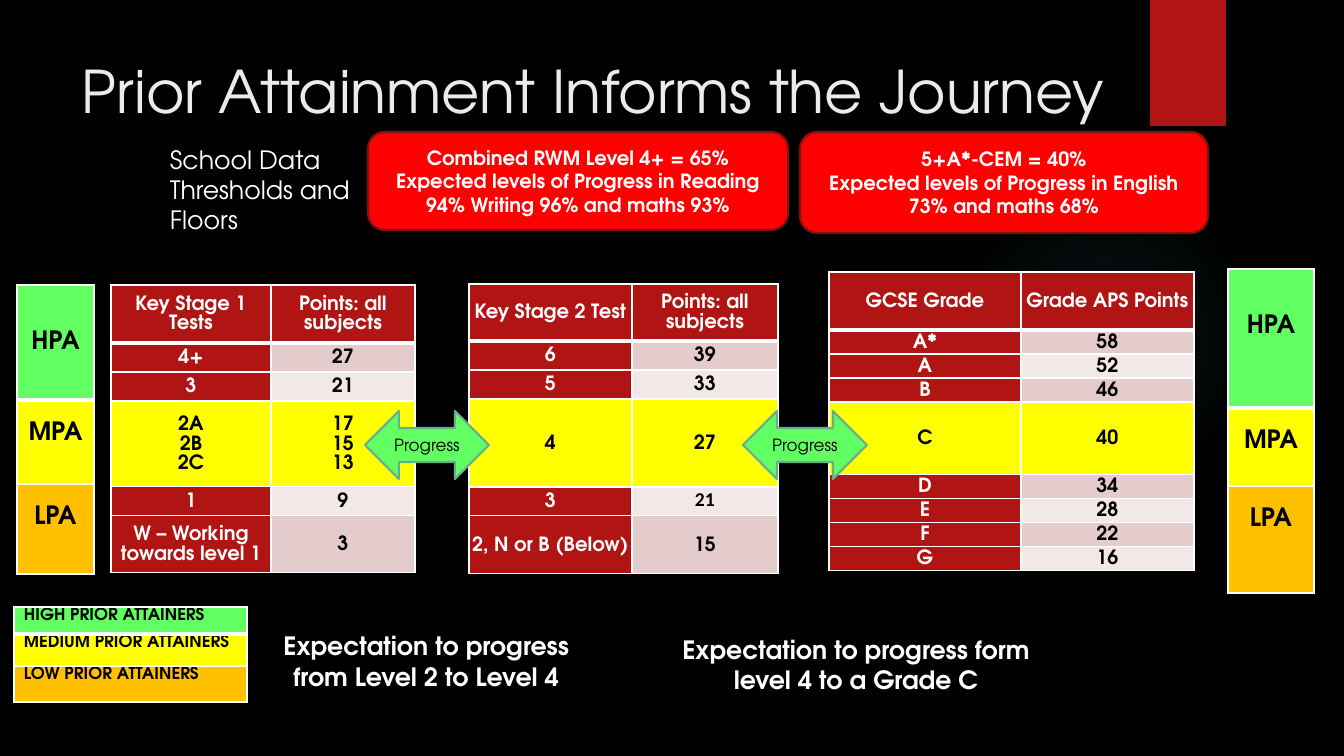
"""Build the slide on prior attainment and the journey from Key Stage 1 to GCSE."""
from lxml.etree import SubElement
from pptx import Presentation
from pptx.dml.color import RGBColor as RGB
from pptx.enum.shapes import MSO_SHAPE as SHAPE
from pptx.enum.text import MSO_ANCHOR as ANCHOR, PP_ALIGN as ALIGN
from pptx.oxml import parse_xml
from pptx.oxml.ns import nsdecls, qn
from pptx.util import Pt

PX = 9071
THEME = {
    "font": "TeX Gyre Adventor", "black": "000000", "white": "FFFFFF", "title": "EBEBEB",
    "brick": "B01513", "red": "FF0000", "red edge": "82100E", "glow": "50B9C1",
    "high": "61FF61", "medium": "FFFF00", "low": "FFC000", "arrow edge": "6AAC90",
    "bands": ("F2E8E7", "E4CCCC"),
    "title size": 42, "large": 18, "body": 14, "small": 12,
}


def write(frame, lines, size, color, bold=False, align=ALIGN.CENTER, spacing=None):
    frame.word_wrap = True
    for number, line in enumerate(lines):
        paragraph = frame.add_paragraph() if number else frame.paragraphs[0]
        paragraph.alignment, paragraph.line_spacing = align, spacing
        run = paragraph.add_run()
        run.text = line
        font_format = {"name": THEME["font"], "size": Pt(THEME[size]), "bold": bold}
        for key, value in font_format.items():
            setattr(run.font, key, value)
        run.font.color.rgb = RGB.from_string(THEME[color])


def add_grid(left, top, widths, heights, cell_formats):
    grid = slide.shapes.add_table(len(heights), len(widths), left * PX, top * PX,
                                  sum(widths) * PX, sum(heights) * PX).table
    grid.first_row = grid.horz_banding = False
    for column, width in zip(grid.columns, widths):
        column.width = width * PX
    for r, height in enumerate(heights):
        grid.rows[r].height = height * PX
        for c in range(len(widths)):
            cell = grid.cell(r, c)
            lines, fill, text_format, margins, anchor = cell_formats[r][c]
            cell.fill.solid()
            cell.fill.fore_color.rgb = RGB.from_string(fill)
            cell.vertical_anchor = anchor
            for side, margin in zip(("left", "top", "right", "bottom"), margins):
                setattr(cell, f"margin_{side}", margin * PX)
            write(cell.text_frame, lines, **text_format)
            for order, side in enumerate("LRTB"):
                heavy = (r, side) in ((0, "B"), (1, "T"))
                border = parse_xml(f'<a:ln{side} {nsdecls("a")} w="{Pt(3 if heavy else 1)}">'
                                   f'<a:solidFill><a:srgbClr val="{THEME["white"]}"/>'
                                   f'</a:solidFill></a:ln{side}>')
                cell._tc.get_or_add_tcPr().insert(order, border)
    return grid


deck = Presentation()
deck.slide_width, deck.slide_height = 1344 * PX, 756 * PX
slide = deck.slides.add_slide(deck.slide_layouts[6])
slide.background.fill.solid()
slide.background.fill.fore_color.rgb = RGB.from_string(THEME["black"])

glow = slide.shapes.add_shape(SHAPE.OVAL, 949 * PX, 184 * PX, 310 * PX, 310 * PX)
glow.shadow.inherit = False
glow.line.fill.background()
glow.fill.gradient()
gradient = glow._element.spPr.find(qn("a:gradFill"))
for part in list(gradient):
    gradient.remove(part)
stops = SubElement(gradient, qn("a:gsLst"))
for position, opacity in ((0, 7), (36, 6), (69, 0)):
    stop = SubElement(stops, qn("a:gs"), pos=str(position * 1000))
    tint = SubElement(stop, qn("a:srgbClr"), val=THEME["glow"])
    SubElement(tint, qn("a:alpha"), val=str(opacity * 1000))
radial = SubElement(gradient, qn("a:path"), path="circle")
SubElement(radial, qn("a:fillToRect"), l="50000", t="50000", r="50000", b="50000")

for box, line, size, color in (
    ((72, 50, 1158, 105), "Prior Attainment Informs the Journey", "title size", "title"),
    ((160, 139, 213, 102), "School Data Thresholds and Floors", "large", "white"),
):
    caption = slide.shapes.add_textbox(*(n * PX for n in box))
    write(caption.text_frame, [line], size, color, align=ALIGN.LEFT)

stages = (
    (111, 285, (160, 144), (58, 29, 29, 86, 29, 57), 3, (
        ("Key Stage 1 Tests", "Points: all subjects"), ("4+", "27"), ("3", "21"),
        ("2A\n2B\n2C", "17\n15\n13"), ("1", "9"), ("W – Working towards level 1", "3"))),
    (469, 284, (163, 146), (57, 29, 29, 88, 29, 58), 3, (
        ("Key Stage 2 Test", "Points: all subjects"), ("6", "39"), ("5", "33"),
        ("4", "27"), ("3", "21"), ("2, N or B (Below)", "15"))),
    (829, 272, (192, 173), (58, 24, 24, 24, 73, 24, 24, 24, 24), 4, (
        ("GCSE Grade", "Grade APS Points"), ("A*", "58"), ("A", "52"), ("B", "46"),
        ("C", "40"), ("D", "34"), ("E", "28"), ("F", "22"), ("G", "16"))),
)
stage_grids = []
for left, top, widths, heights, expected, scores in stages:
    cell_formats = []
    for r, pair in enumerate(scores):
        row_formats = []
        for c, score in enumerate(pair):
            on_brick = r != expected and (r == 0 or c == 0)
            fill = THEME["brick"] if on_brick else THEME["bands"][r % 2]
            if r == expected:
                fill = THEME["medium"]
            text_format = {"size": "body", "color": "white" if on_brick else "black",
                           "bold": True, "spacing": Pt(THEME["body"])}
            row_formats.append((score.split("\n"), fill, text_format, (1, 1, 1, 1), ANCHOR.MIDDLE))
        cell_formats.append(row_formats)
    stage_grids.append(add_grid(left, top, widths, heights, cell_formats))
stage_grids[1].cell(4, 1).text_frame.paragraphs[0].runs[0].font.name = "Calibri"

attainers = ("HPA", "MPA", "LPA")
legend = ("HIGH PRIOR ATTAINERS", "MEDIUM PRIOR ATTAINERS", "LOW PRIOR ATTAINERS")
for left, top, width, heights, labels, size, align, side, drops in (
    (1228, 269, 86, (139, 78, 107), attainers, "large", ALIGN.CENTER, 0, (46, 22, 22)),
    (17, 285, 77, (115, 84, 90), attainers, "large", ALIGN.CENTER, 0, (46, 22, 22)),
    (14, 607, 233, (27, 32, 36), legend, "small", ALIGN.LEFT, 10, (1, 1, 1)),
):
    text_format = {"size": size, "color": "black", "bold": True, "align": align}
    add_grid(left, top, (width,), heights, [
        [([label], THEME[level], text_format, (side, drop, side, 0), ANCHOR.TOP)]
        for label, level, drop in zip(labels, ("high", "medium", "low"), drops)])

for kind, box, fill, edge, lines, size, color, bold in (
    (SHAPE.RECTANGLE, (1150, 0, 76, 126), "brick", "brick", (), "body", "white", False),
    (SHAPE.LEFT_RIGHT_ARROW, (365, 411, 124, 68), "high", "arrow edge",
     ("Progress",), "small", "black", False),
    (SHAPE.LEFT_RIGHT_ARROW, (743, 411, 124, 68), "high", "arrow edge",
     ("Progress",), "small", "black", False),
    (SHAPE.RIGHT_ARROW, (664, 587, 423, 155), "black", "black",
     ("Expectation to progress form level 4 to a Grade C",), "large", "white", True),
    (SHAPE.RIGHT_ARROW, (267, 580, 359, 162), "black", "black",
     ("Expectation to progress from Level 2 to Level 4",), "large", "white", True),
    (SHAPE.ROUNDED_RECTANGLE, (800, 132, 408, 101), "red", "red edge",
     ("5+A*-CEM = 40%", "Expected levels of Progress in English 73% and maths 68%"),
     "body", "white", True),
    (SHAPE.ROUNDED_RECTANGLE, (368, 132, 420, 98), "red", "red edge",
     ("Combined RWM Level 4+ = 65%",
      "Expected levels of Progress in Reading 94% Writing 96% and maths 93%"),
     "body", "white", True),
):
    block = slide.shapes.add_shape(kind, *(n * PX for n in box))
    block.shadow.inherit = False
    block.fill.solid()
    block.fill.fore_color.rgb = RGB.from_string(THEME[fill])
    block.line.color.rgb = RGB.from_string(THEME[edge])
    block.line.width = Pt(1.5)
    if fill == edge:
        block.line.fill.background()
    block.text_frame.vertical_anchor = ANCHOR.MIDDLE
    write(block.text_frame, lines, size, color, bold)

deck.save("out.pptx")
